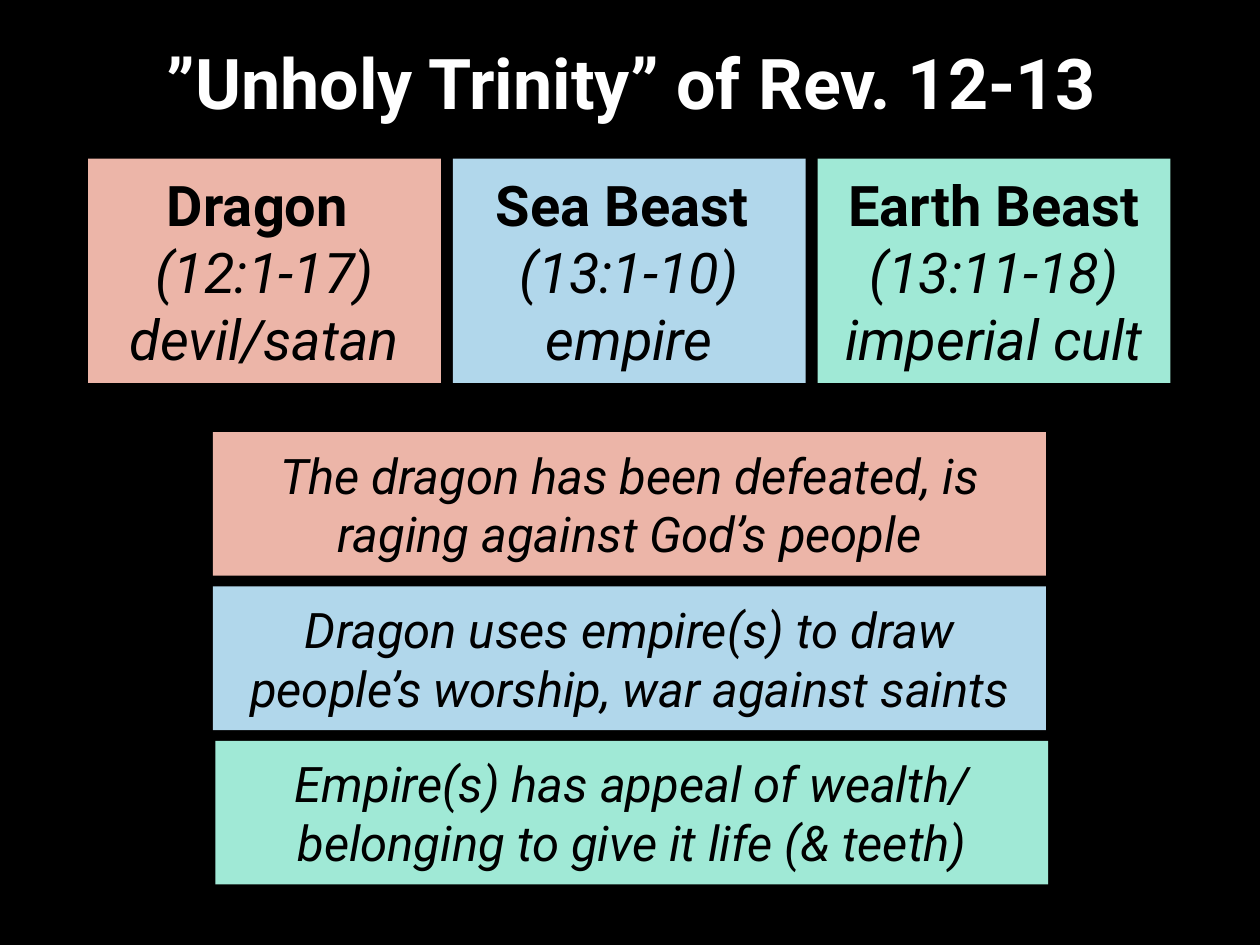
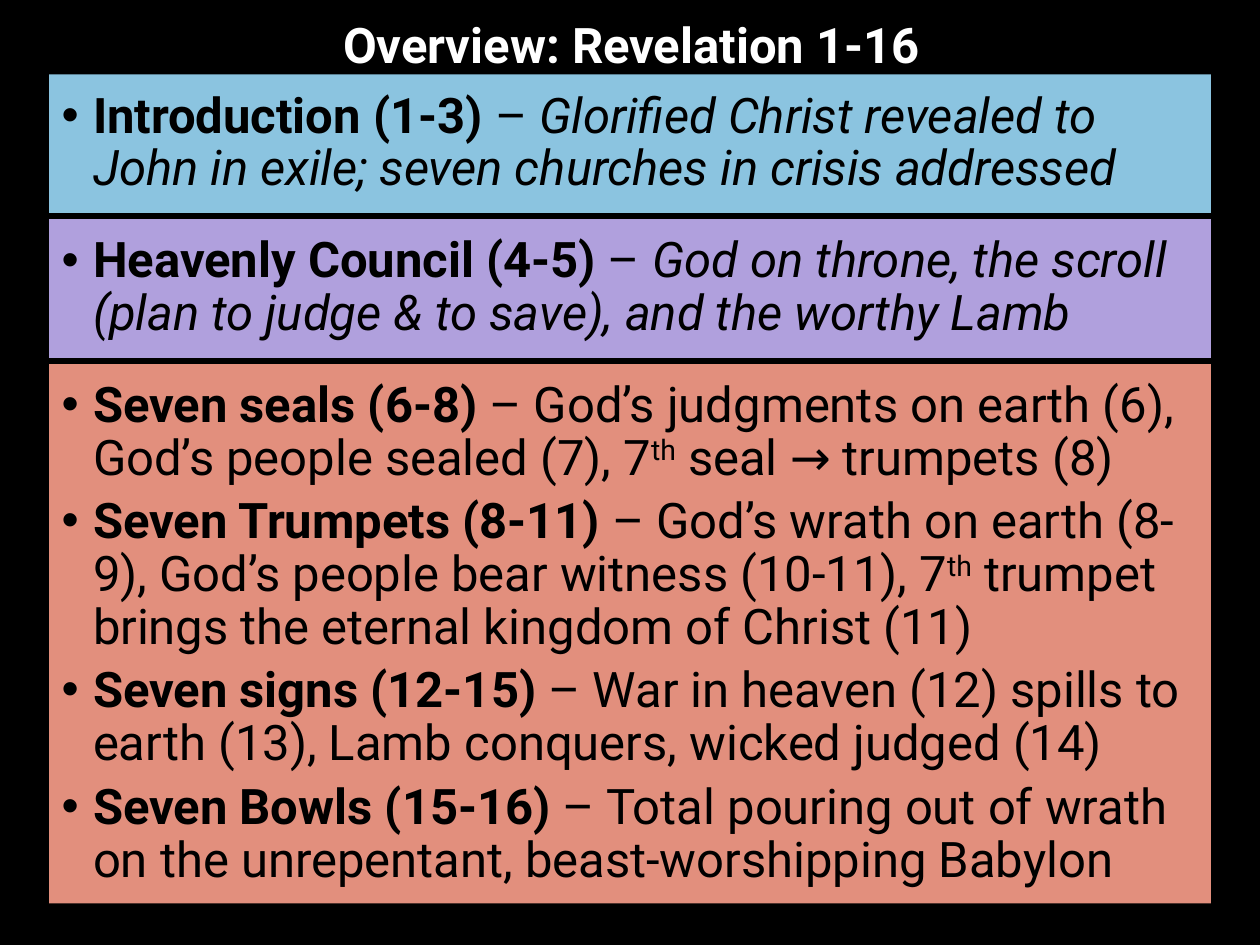
"""Build two slides on Revelation: the unholy trinity and an overview of chapters 1-16."""
from lxml import etree
from pptx import Presentation
from pptx.dml.color import RGBColor
from pptx.enum.shapes import MSO_SHAPE
from pptx.enum.text import MSO_ANCHOR, PP_ALIGN
from pptx.oxml.ns import qn
from pptx.util import Inches, Pt

RECTANGLE = MSO_SHAPE.RECTANGLE
MIDDLE = MSO_ANCHOR.MIDDLE
CENTER, LEFT = PP_ALIGN.CENTER, PP_ALIGN.LEFT

COLORS = {
    "background": "000000", "title": "FFFFFF", "text": "000000",
    "dragon": "ECB5A8", "sea": "B1D7EB", "earth": "A0E9D6",
    "introduction": "8BC4E0", "council": "B0A0DD", "sevens": "E28F7D",
}
FONT = "Roboto"
STYLES = {
    "plain": {},
    "bold": {"bold": True},
    "italic": {"italic": True},
    "super": {},
}
SUPERSCRIPT = "30000"
TITLE_FORMAT = {"alignment": CENTER, "line_spacing": 0.9}
CARD_FORMAT = {"alignment": CENTER}
OUTLINE_FORMAT = {"alignment": LEFT, "line_spacing": 0.9}
SEVENS_FORMAT = {**OUTLINE_FORMAT, "space_after": Pt(6)}

TRINITY_TITLE = "”Unholy Trinity” of Rev. 12-13"
BEASTS = [
    ("dragon", [[("Dragon ", "bold")],
                [("(12:1-17)", "italic")],
                [("devil/satan", "italic")]]),
    ("sea", [[("Sea Beast ", "bold")],
             [("(13:1-10)", "italic")],
             [("empire", "italic")]]),
    ("earth", [[("Earth Beast ", "bold"), ("(13:11-18)", "italic")],
               [("imperial cult", "italic")]]),
]
MEANINGS = [
    ("dragon", 1.69, "The dragon has been defeated, is raging against God’s people"),
    ("sea", 1.69, "Dragon uses empire(s) to draw people’s worship, war against saints"),
    ("earth", 1.71, "Empire(s) has appeal of wealth/ belonging to give it life (& teeth)"),
]

OVERVIEW_TITLE = "Overview: Revelation 1-16"
SECTIONS = [
    ("introduction", 1.1, OUTLINE_FORMAT, [
        [("Introduction (1-3) ", "bold"), ("– ", "plain"),
         ("Glorified Christ revealed to John in exile; seven churches in crisis addressed",
          "italic")],
    ]),
    ("council", 1.1, OUTLINE_FORMAT, [
        [("Heavenly Council (4-5) ", "bold"), ("– ", "plain"),
         ("God on throne, the scroll (plan to judge & to save), and the worthy Lamb",
          "italic")],
    ]),
    ("sevens", 4.28, SEVENS_FORMAT, [
        [("Seven seals (6-8) ", "bold"),
         ("– God’s judgments on earth (6), God’s people sealed (7), 7", "plain"),
         ("th", "super"), (" seal → trumpets (8)", "plain")],
        [("Seven Trumpets (8-11) ", "bold"),
         ("– God’s wrath on earth (8-9), God’s people bear witness (10-11), 7", "plain"),
         ("th", "super"),
         (" trumpet brings the eternal kingdom of Christ (11)", "plain")],
        [("Seven signs (12-15) ", "bold"),
         ("– War in heaven (12) spills to earth (13), Lamb conquers, wicked judged (14)",
          "plain")],
        [("Seven Bowls (15-16) ", "bold"),
         ("– Total pouring out of wrath on the unrepentant, beast-worshipping Babylon",
          "plain")],
    ]),
]

TITLE_LEFT, TITLE_WIDTH = 0.7, 8.62
BEAST_LEFT, BEAST_RIGHT, BEAST_TOP = 0.7, 9.29, 1.26
BEAST_WIDTH, BEAST_HEIGHT = 2.8, 1.78
MEANING_TOP, MEANING_BOTTOM = 3.43, 7.02
MEANING_WIDTH, MEANING_HEIGHT = 6.61, 1.14
SECTION_LEFT, SECTION_TOP, SECTION_WIDTH, SECTION_GAP = 0.39, 0.59, 9.22, 0.05


def apply(target, values):
    """Set every attribute in values on target."""
    for name, value in values.items():
        setattr(target, name, value)


def add_bullet(paragraph):
    """Give the paragraph a hanging round bullet."""
    properties = paragraph._p.get_or_add_pPr()
    properties.set("marL", str(Inches(0.25)))
    properties.set("indent", str(Inches(-0.25)))
    etree.SubElement(properties, qn("a:buFont")).set("typeface", "Arial")
    etree.SubElement(properties, qn("a:buChar")).set("char", "•")


def write(frame, paragraphs, size, layout, color="text", bulleted=False):
    """Fill a text frame with paragraphs made of styled runs."""
    apply(frame, {"word_wrap": True, "vertical_anchor": MIDDLE})
    for index, pieces in enumerate(paragraphs):
        paragraph = frame.add_paragraph() if index else frame.paragraphs[0]
        if bulleted:
            add_bullet(paragraph)
        apply(paragraph, layout)
        for text, style in pieces:
            run = paragraph.add_run()
            run.text = text
            apply(run.font, {"name": FONT, "size": Pt(size), **STYLES[style]})
            run.font.color.rgb = RGBColor.from_string(COLORS[color])
            if style == "super":
                run._r.get_or_add_rPr().set("baseline", SUPERSCRIPT)


def add_titled_slide(deck, title, size, top, height):
    """Add a black slide with a centred bold title."""
    slide = deck.slides.add_slide(deck.slide_layouts[6])
    slide.background.fill.solid()
    slide.background.fill.fore_color.rgb = RGBColor.from_string(COLORS["background"])
    heading = slide.shapes.add_textbox(*map(Inches, (TITLE_LEFT, top, TITLE_WIDTH, height)))
    write(heading.text_frame, [[(title, "bold")]], size, TITLE_FORMAT, "title")
    return slide


def add_panel(slide, box, color, paragraphs, size, layout, bulleted=False):
    """Add a filled rectangle without outline that holds text."""
    panel = slide.shapes.add_shape(RECTANGLE, *map(Inches, box))
    panel.shadow.inherit = False
    panel.fill.solid()
    panel.fill.fore_color.rgb = RGBColor.from_string(COLORS[color])
    panel.line.fill.background()
    write(panel.text_frame, paragraphs, size, layout, bulleted=bulleted)


def build_trinity(deck):
    """Three beasts side by side above three stacked meanings."""
    slide = add_titled_slide(deck, TRINITY_TITLE, 40, 0.24, 0.89)
    across = (BEAST_RIGHT - BEAST_LEFT - BEAST_WIDTH) / (len(BEASTS) - 1)
    for column, (color, lines) in enumerate(BEASTS):
        box = (BEAST_LEFT + column * across, BEAST_TOP, BEAST_WIDTH, BEAST_HEIGHT)
        add_panel(slide, box, color, lines, 32, CARD_FORMAT)
    down = (MEANING_BOTTOM - MEANING_TOP - MEANING_HEIGHT) / (len(MEANINGS) - 1)
    for row, (color, left, meaning) in enumerate(MEANINGS):
        box = (left, MEANING_TOP + row * down, MEANING_WIDTH, MEANING_HEIGHT)
        add_panel(slide, box, color, [[(meaning, "italic")]], 28, CARD_FORMAT)


def build_overview(deck):
    """Outline sections stacked under the title."""
    slide = add_titled_slide(deck, OVERVIEW_TITLE, 28, 0.09, 0.57)
    top = SECTION_TOP
    for color, height, layout, entries in SECTIONS:
        box = (SECTION_LEFT, top, SECTION_WIDTH, height)
        add_panel(slide, box, color, entries, 28, layout, bulleted=True)
        top += height + SECTION_GAP


def main():
    """Create and save the deck."""
    deck = Presentation()
    apply(deck, {"slide_width": Inches(10), "slide_height": Inches(7.5)})
    build_trinity(deck)
    build_overview(deck)
    deck.save("out.pptx")


if __name__ == "__main__":
    main()
